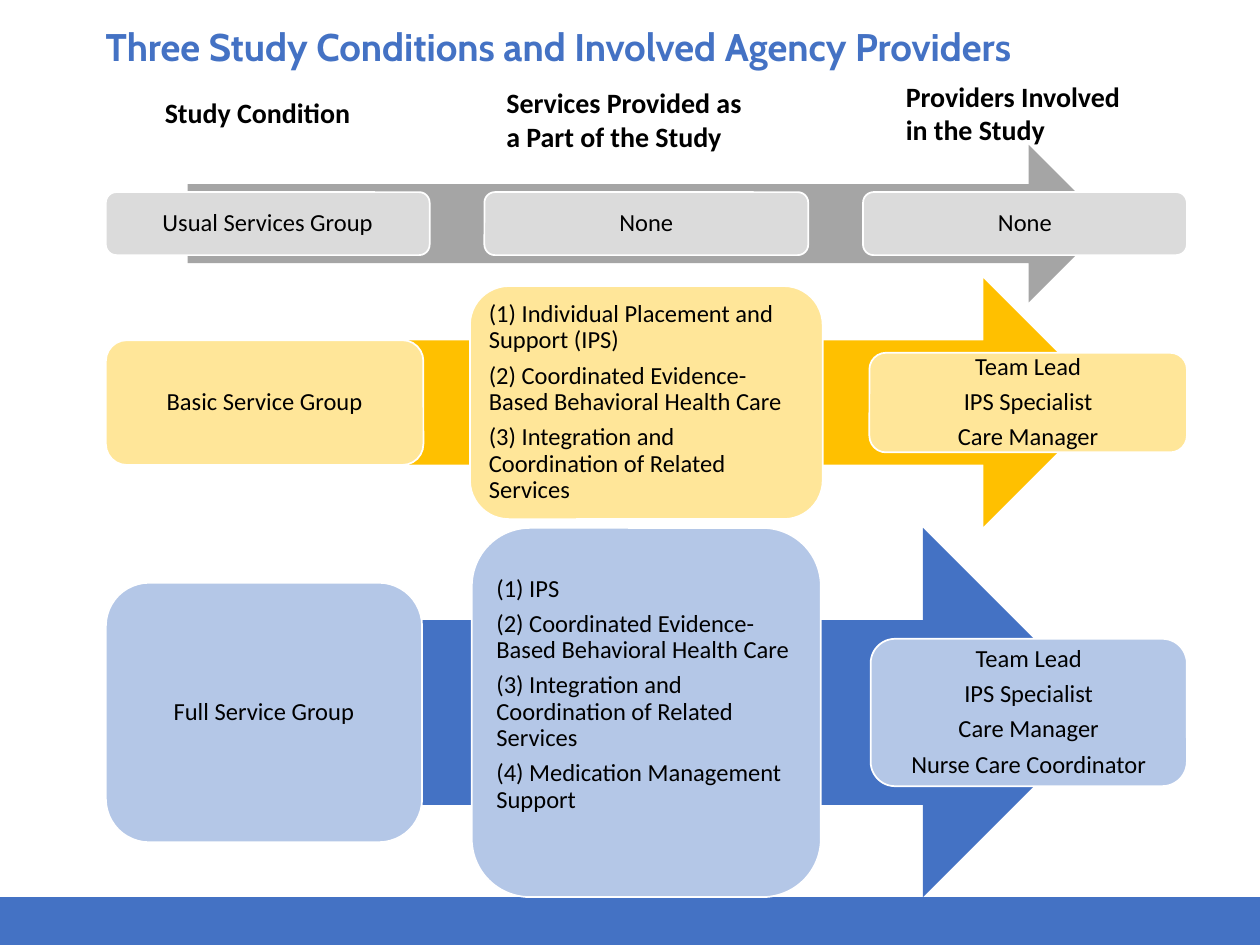
from dataclasses import dataclass

from pptx import Presentation
from pptx.dml.color import RGBColor
from pptx.enum.shapes import MSO_SHAPE
from pptx.enum.text import MSO_ANCHOR, PP_ALIGN
from pptx.util import Inches, Pt


@dataclass(frozen=True)
class Theme:
    """Colours, fonts and type sizes of the slide."""
    blue: str = "4472C4"
    light_blue: str = "B4C7E7"
    gold: str = "FFC000"
    light_gold: str = "FFE699"
    gray: str = "A5A5A5"
    light_gray: str = "DBDBDB"
    white: str = "FFFFFF"
    black: str = "000000"
    title_font: str = "Cabin"
    body_font: str = "Calibri"
    title_size: int = 22
    heading_size: int = 16
    body_size: int = 14


THEME = Theme()

HEADINGS = [
    ("Study Condition", (1.21, 0.71, 1.97, 0.37)),
    ("Services Provided as a Part of the Study", (3.92, 0.63, 2.19, 0.64)),
    ("Providers Involved in the Study", (7.09, 0.58, 2.11, 0.64)),
]

COORDINATED_CARE = "(2) Coordinated Evidence-Based Behavioral Health Care"
INTEGRATION = "(3) Integration and Coordination of Related Services"
TEAM = ["Team Lead", "IPS Specialist", "Care Manager"]


@dataclass(frozen=True)
class Condition:
    """One study condition: its row box, colours and three cards."""
    top: float
    height: float
    arrow_color: str
    card_color: str
    card_sizes: tuple
    card_texts: tuple
    services_align: PP_ALIGN = PP_ALIGN.LEFT
    services_bottom: float = 0.06


CONDITIONS = [
    Condition(1.15, 1.25, THEME.gray, THEME.light_gray,
              ((2.57, 0.5), (2.57, 0.5), (2.57, 0.5)),
              (["Usual Services Group"], ["None"], ["None"]),
              services_align=PP_ALIGN.CENTER),
    Condition(2.21, 1.97, THEME.gold, THEME.light_gold,
              ((2.52, 0.99), (2.8, 1.85), (2.52, 0.79)),
              (["Basic Service Group"],
               ["(1) Individual Placement and Support (IPS)",
                COORDINATED_CARE, INTEGRATION],
               TEAM)),
    Condition(4.19, 2.93, THEME.blue, THEME.light_blue,
              ((2.51, 2.06), (2.77, 2.93), (2.51, 1.17)),
              (["Full Service Group"],
               ["(1) IPS", COORDINATED_CARE, INTEGRATION,
                "(4) Medication Management Support"],
               TEAM + ["Nurse Care Coordinator"]),
              services_bottom=0.34),
]


def write_text(frame, lines, size=THEME.body_size, font=THEME.body_font,
               color=THEME.black, bold=False, align=PP_ALIGN.LEFT,
               line_spacing=1.0, space_after=0):
    """Write one paragraph per line into a text frame."""
    frame.word_wrap = True
    for index, line in enumerate(lines):
        paragraph = frame.add_paragraph() if index else frame.paragraphs[0]
        paragraph.alignment = align
        paragraph.line_spacing = line_spacing
        paragraph.space_after = Pt(space_after)
        run = paragraph.add_run()
        run.text = line
        run.font.size = Pt(size)
        run.font.name = font
        run.font.bold = bold
        run.font.color.rgb = RGBColor.from_string(color)


def add_label(slide, box, text, **text_format):
    """Place a wrapped text box."""
    shape = slide.shapes.add_textbox(*map(Inches, box))
    write_text(shape.text_frame, [text], **text_format)


def add_block(slide, kind, box, fill, line=None):
    """Place a flat filled shape with an optional outline."""
    shape = slide.shapes.add_shape(kind, *map(Inches, box))
    shape.shadow.inherit = False
    shape.fill.solid()
    shape.fill.fore_color.rgb = RGBColor.from_string(fill)
    if line:
        shape.line.color.rgb = RGBColor.from_string(line)
        shape.line.width = Pt(1)
    else:
        shape.line.fill.background()
    return shape


def add_card(slide, box, lines, fill, align, bottom=0.06):
    """Place a rounded card with its text centred vertically."""
    shape = add_block(slide, MSO_SHAPE.ROUNDED_RECTANGLE, box, fill, THEME.white)
    frame = shape.text_frame
    frame.margin_left = frame.margin_right = frame.margin_top = Inches(0.06)
    frame.margin_bottom = Inches(bottom)
    frame.vertical_anchor = MSO_ANCHOR.MIDDLE
    write_text(frame, lines, align=align, line_spacing=0.9, space_after=4.9)


def add_condition(slide, box, condition):
    """Place an arrow with cards at the left, middle and right of the box."""
    left, top, width, height = box
    add_block(slide, MSO_SHAPE.RIGHT_ARROW, (left + 0.65, top, 7.3, height),
              condition.arrow_color)
    aligns = (PP_ALIGN.CENTER, condition.services_align, PP_ALIGN.CENTER)
    bottoms = (0.06, condition.services_bottom, 0.06)
    cards = zip(condition.card_sizes, condition.card_texts, aligns, bottoms)
    for column, ((card_width, card_height), lines, align, bottom) in enumerate(cards):
        card_left = left + (width - card_width) * column / 2
        card_top = top + (height - card_height) / 2
        add_card(slide, (card_left, card_top, card_width, card_height),
                 lines, condition.card_color, align, bottom)


def add_header(slide, title_box):
    """Place the title and the column headings."""
    for text, box in HEADINGS:
        add_label(slide, box, text, size=THEME.heading_size, bold=True)
    add_label(slide, title_box,
              "Three Study Conditions and Involved Agency Providers",
              size=THEME.title_size, font=THEME.title_font,
              color=THEME.blue, bold=True)


def main():
    """Build and save the slide."""
    presentation = Presentation()
    presentation.slide_width = Inches(10)
    presentation.slide_height = Inches(7.5)
    slide = presentation.slides.add_slide(presentation.slide_layouts[6])
    add_block(slide, MSO_SHAPE.RECTANGLE, (0, 7.12, 10, 0.38), THEME.blue)
    for condition in CONDITIONS:
        add_condition(slide, (0.84, condition.top, 8.58, condition.height), condition)
    add_header(slide, (0.74, 0.13, 8.78, 0.47))
    presentation.save("out.pptx")


if __name__ == "__main__":
    main()
